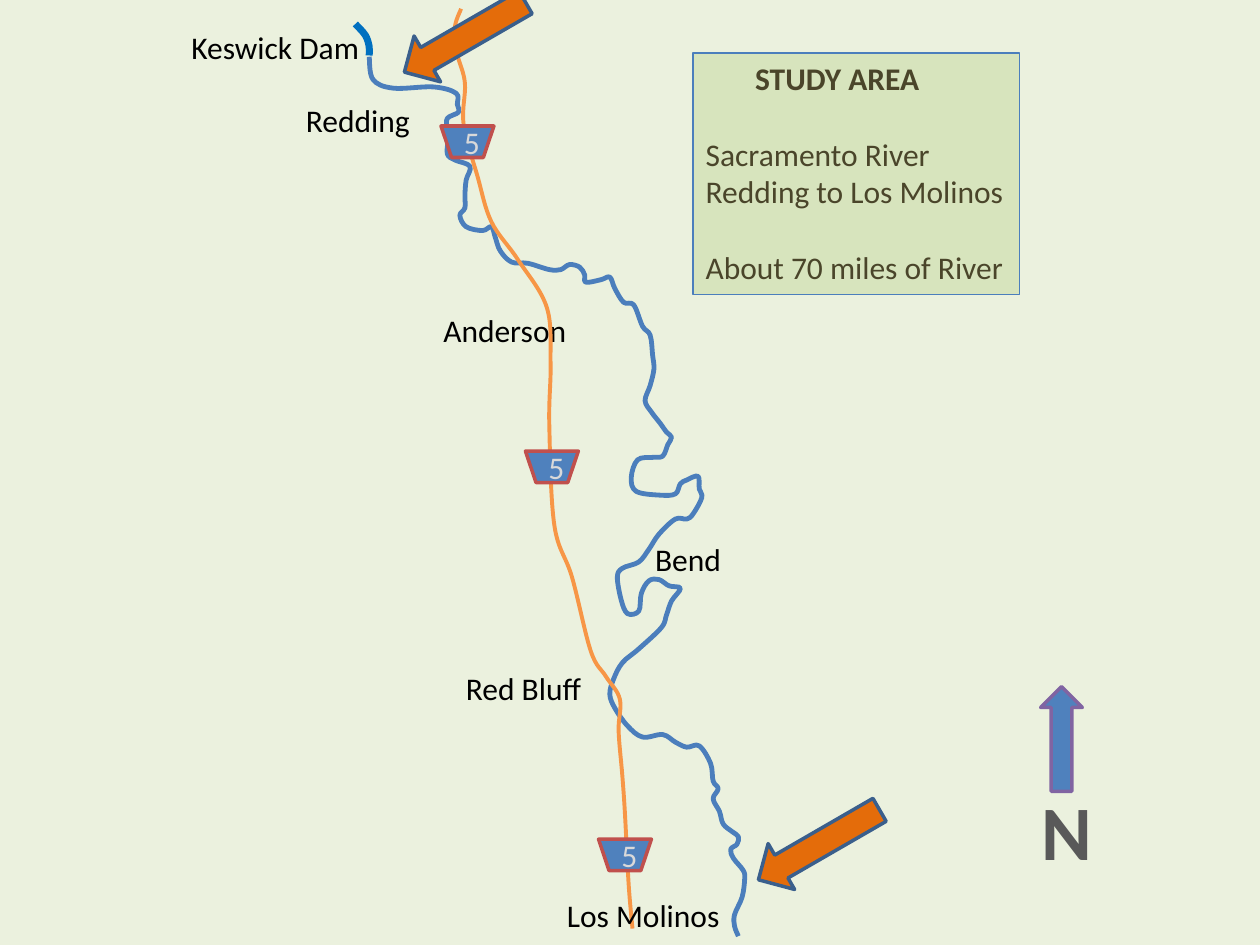
from lxml import etree
from pptx import Presentation
from pptx.dml.color import RGBColor
from pptx.enum.shapes import MSO_SHAPE
from pptx.enum.text import MSO_ANCHOR, MSO_AUTO_SIZE, PP_ALIGN
from pptx.oxml.ns import qn
from pptx.util import Cm, Pt

LEFT, CENTER = PP_ALIGN.LEFT, PP_ALIGN.CENTER
TOP, MIDDLE = MSO_ANCHOR.TOP, MSO_ANCHOR.MIDDLE
NO_AUTOFIT = MSO_AUTO_SIZE.NONE
SHIELD = MSO_SHAPE.FLOWCHART_MANUAL_OPERATION
DOWN_ARROW, RIGHT_ARROW = MSO_SHAPE.DOWN_ARROW, MSO_SHAPE.RIGHT_ARROW
TITLE_ONLY = 5
CM_PER_INCH = 2.54

COLORS = {
    "background": "EBF1DE", "river": "4B7EBC", "dam": "0070C0", "highway": "F79646",
    "blue": "4F81BD", "shield edge": "C0504D", "shield text": "D9D9D9",
    "north edge": "8064A2", "north text": "595959", "label": "000000",
    "panel": "D7E4BD", "panel text": "4A452A", "marker": "E46C0A", "marker edge": "3A5F8C",
}

RIVER = [
    (2.93, 0.45), (2.96, 0.63), (3.12, 0.7), (3.44, 0.69), (3.62, 0.74), (3.63, 0.83),
    (3.64, 0.89), (3.55, 0.94), (3.55, 1.03), (3.56, 1.09), (3.55, 1.22), (3.61, 1.27),
    (3.73, 1.32), (3.7, 1.43), (3.69, 1.55), (3.69, 1.65), (3.65, 1.71), (3.7, 1.8),
    (3.83, 1.83), (3.9, 1.8), (3.93, 1.88), (3.97, 1.99), (4.06, 2.08), (4.19, 2.09),
    (4.36, 2.14), (4.45, 2.14), (4.52, 2.1), (4.6, 2.12), (4.64, 2.18), (4.65, 2.24),
    (4.77, 2.22), (4.84, 2.2), (4.88, 2.29), (4.95, 2.4), (5.03, 2.42), (5.1, 2.59),
    (5.16, 2.66), (5.18, 2.82), (5.19, 2.93), (5.16, 3.06), (5.12, 3.18), (5.17, 3.27),
    (5.24, 3.36), (5.29, 3.43), (5.33, 3.47), (5.3, 3.53), (5.26, 3.62), (5.18, 3.63),
    (5.06, 3.65), (5.01, 3.79), (5.05, 3.9), (5.24, 3.93), (5.36, 3.92), (5.4, 3.84),
    (5.45, 3.81), (5.54, 3.78), (5.55, 3.88), (5.57, 3.95), (5.5, 4.08), (5.45, 4.12),
    (5.36, 4.12), (5.23, 4.24), (5.15, 4.36), (5.07, 4.46), (4.94, 4.51), (4.9, 4.58),
    (4.93, 4.76), (4.98, 4.87), (5.07, 4.85), (5.09, 4.71), (5.15, 4.61), (5.23, 4.6),
    (5.31, 4.65), (5.4, 4.67), (5.33, 4.77), (5.29, 4.88), (5.25, 4.98), (5.07, 5.15),
    (4.94, 5.26), (4.87, 5.39), (4.84, 5.51), (4.88, 5.62), (4.98, 5.76), (5.1, 5.85),
    (5.26, 5.83), (5.36, 5.89), (5.45, 5.93), (5.55, 5.92), (5.64, 6.06), (5.66, 6.2),
    (5.7, 6.26), (5.66, 6.34), (5.71, 6.44), (5.74, 6.54), (5.81, 6.6), (5.86, 6.64),
    (5.85, 6.7), (5.8, 6.74), (5.82, 6.81), (5.9, 6.91), (5.91, 6.98), (5.89, 7.12),
    (5.83, 7.26), (5.83, 7.35), (5.86, 7.43),
]
HIGHWAY = [
    (3.66, 0.07), (3.61, 0.22), (3.63, 0.43), (3.69, 0.66), (3.68, 0.99), (3.79, 1.4),
    (3.9, 1.76), (4.11, 2.06), (4.34, 2.44), (4.37, 2.89), (4.36, 3.37), (4.4, 4.17),
    (4.54, 4.58), (4.69, 5.17), (4.81, 5.37), (4.92, 5.55), (4.91, 5.8), (4.94, 6.16),
    (4.96, 6.45), (4.99, 7.02), (5.02, 7.37),
]
DAM = [(2.82, 0.19), (2.9, 0.28), (2.93, 0.37), (2.93, 0.44)]
TOWNS = [
    ("Red Bluff", 3.6, 5.26, 1.24), ("Redding", 2.33, 0.75, 1.08),
    ("Anderson", 3.42, 2.42, 1.25), ("Bend", 5.1, 4.24, 0.75),
    ("Keswick Dam", 1.42, 0.17, 1.58),
]


def inches(value):
    return Cm(value * CM_PER_INCH)


def rgb(name):
    return RGBColor.from_string(COLORS[name])


def write_text(para, text, size=18, color="label", bold=False, align=LEFT, before=0, margin=0):
    para.alignment = align
    para.space_before = Pt(before)
    properties = para._p.get_or_add_pPr()
    properties.set("marL", str(Cm(margin)))
    properties.set("indent", "0")
    span = para.add_run()
    span.text = text
    span.font.name = "Calibri"
    span.font.size = Pt(size)
    span.font.bold = bold
    span.font.color.rgb = rgb(color)


class MapSlide:
    def __init__(self, deck):
        self.page = deck.slides.add_slide(deck.slide_layouts[TITLE_ONLY])
        self.shapes = self.page.shapes
        fill = self.page.background.fill
        fill.solid()
        fill.fore_color.rgb = rgb("background")

    def paint(self, shape, fill, line, width):
        if fill:
            shape.fill.solid()
            shape.fill.fore_color.rgb = rgb(fill)
        else:
            shape.fill.background()
        shape.line.color.rgb = rgb(line)
        shape.line.width = Pt(width)

    def curve(self, points, color, width):
        knots = [(inches(x), inches(y)) for x, y in points]
        builder = self.shapes.build_freeform(*knots[0])
        builder.add_line_segments(knots[1:], close=False)
        shape = builder.convert_to_shape()
        shape.shadow.inherit = False
        self.paint(shape, None, color, width)
        outline = next(shape._element.iter(qn("a:path")))
        ends = [(int(pt.get("x")), int(pt.get("y"))) for pt in outline.iter(qn("a:pt"))]
        for segment in outline.findall(qn("a:lnTo")):
            outline.remove(segment)
        padded = [ends[0], *ends, ends[-1]]
        for before, start, end, after in zip(padded, padded[1:], padded[2:], padded[3:]):
            first = [s + (e - b) / 6 for b, s, e in zip(before, start, end)]
            second = [e - (a - s) / 6 for s, e, a in zip(start, end, after)]
            bezier = etree.SubElement(outline, qn("a:cubicBezTo"))
            for x, y in (first, second, end):
                etree.SubElement(bezier, qn("a:pt"), x=str(round(x)), y=str(round(y)))

    def preset(self, kind, left, top, width, height, fill, line, rotation=0):
        shape = self.shapes.add_shape(kind, *map(inches, (left, top, width, height)))
        shape.shadow.inherit = False
        shape.rotation = rotation
        self.paint(shape, fill, line, 2)
        return shape

    def label(self, text, left, top, width, height=0.4, **style):
        box = self.shapes.add_textbox(*map(inches, (left, top, width, height)))
        box.text_frame.word_wrap = True
        write_text(box.text_frame.paragraphs[0], text, **style)

    def shield(self, left, top):
        shape = self.preset(SHIELD, left, top, 0.42, 0.25, "blue", "shield edge")
        shape.text_frame.vertical_anchor = MIDDLE
        write_text(shape.text_frame.paragraphs[0], "5", color="shield text", align=CENTER)

    def marker(self, left, top):
        self.preset(DOWN_ARROW, left, top, 0.42, 1.11, "marker", "marker edge", 60)

    def panel(self, left, top, width, height, heading, lines):
        box = self.shapes.title
        box.left, box.top, box.width, box.height = map(inches, (left, top, width, height))
        self.paint(box, "panel", "river", 0.75)
        frame = box.text_frame
        frame.auto_size = NO_AUTOFIT
        frame.word_wrap = True
        frame.vertical_anchor = TOP
        write_text(frame.paragraphs[0], heading, color="panel text", bold=True, margin=1)
        for text, before in lines:
            write_text(frame.add_paragraph(), text, color="panel text", before=before)


def main():
    deck = Presentation()
    deck.slide_width, deck.slide_height = Cm(25.4), Cm(19.05)
    area = MapSlide(deck)
    area.panel(5.5, 0.42, 2.59, 1.92, "STUDY AREA", [
        ("Sacramento River", 21.5), ("Redding to Los Molinos", 0),
        ("About 70 miles of River", 21.5),
    ])
    area.preset(RIGHT_ARROW, 8.01, 5.7, 0.83, 0.33, "blue", "north edge", 270)
    area.label("N", 8.17, 6.17, 0.5, 0.84, size=44, color="north text", bold=True, align=CENTER)
    area.curve(RIVER, "river", 2.75)
    area.curve(DAM, "dam", 4)
    for town in TOWNS:
        area.label(*town)
    area.curve(HIGHWAY, "highway", 2.25)
    area.label("Los Molinos", 4.4, 7.06, 1.58)
    for spot in [(4.17, 3.58), (4.75, 6.66)]:
        area.shield(*spot)
    area.marker(3.48, -0.26)
    area.shield(3.5, 1)
    area.marker(6.29, 6.15)
    deck.save("out.pptx")


if __name__ == "__main__":
    main()
